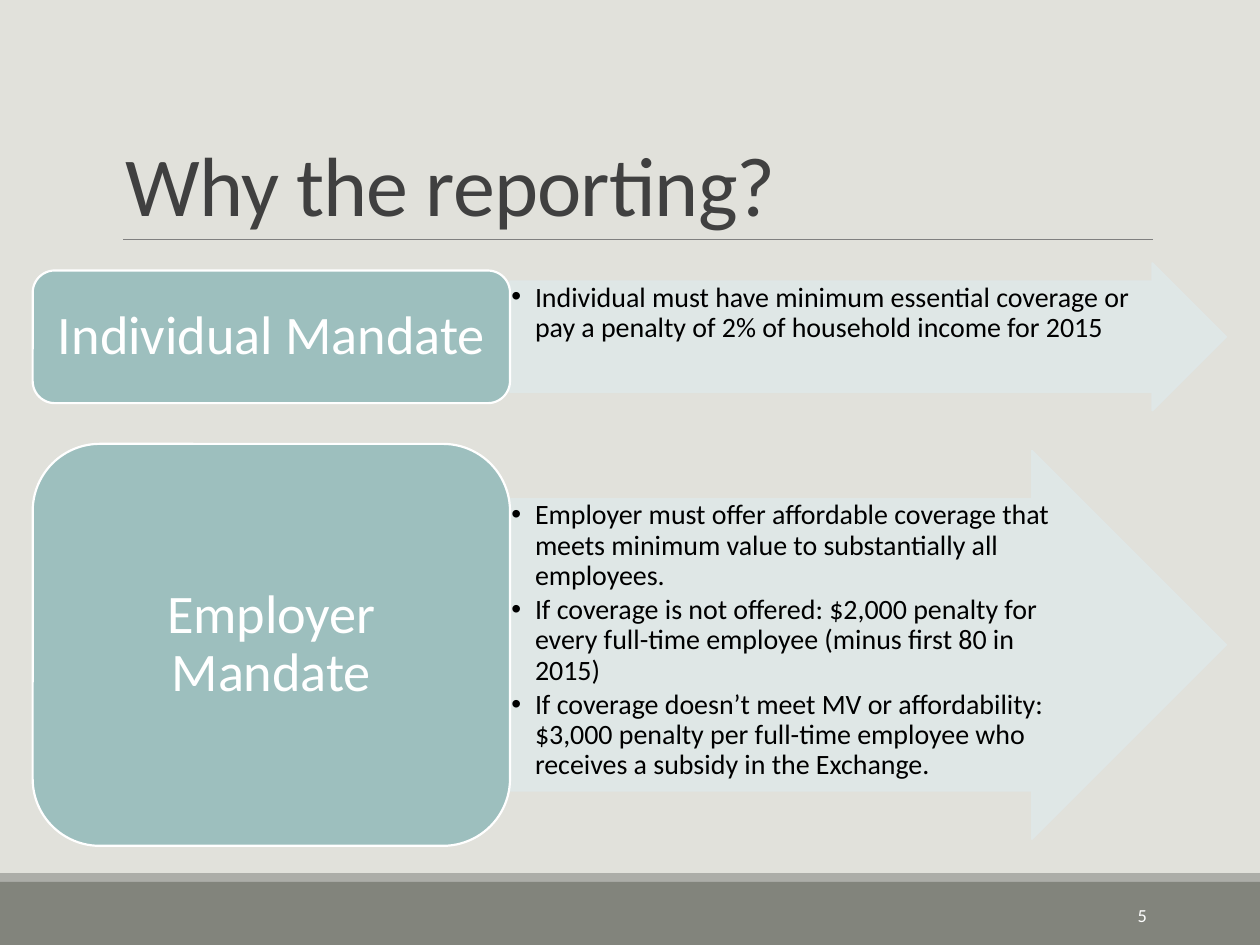
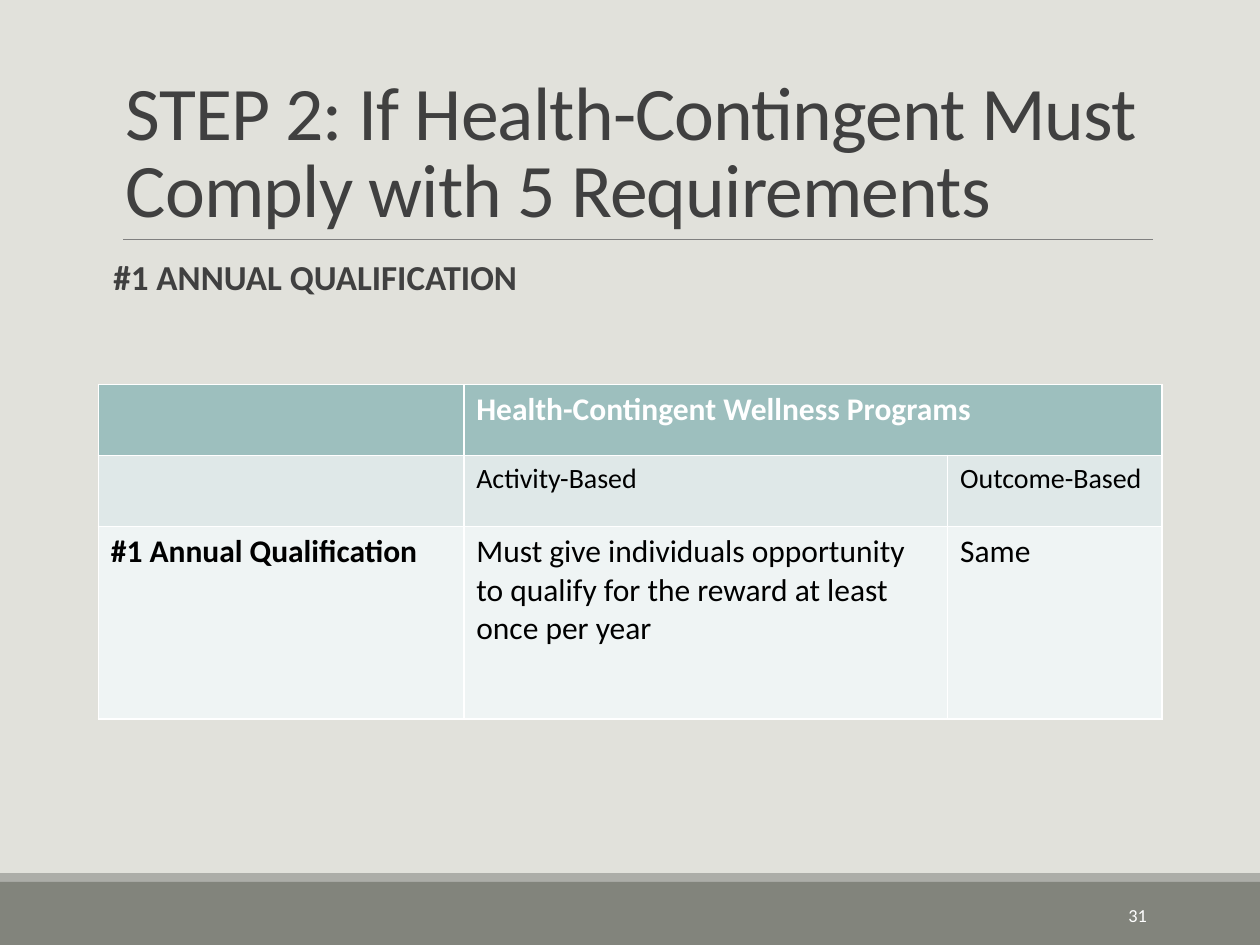
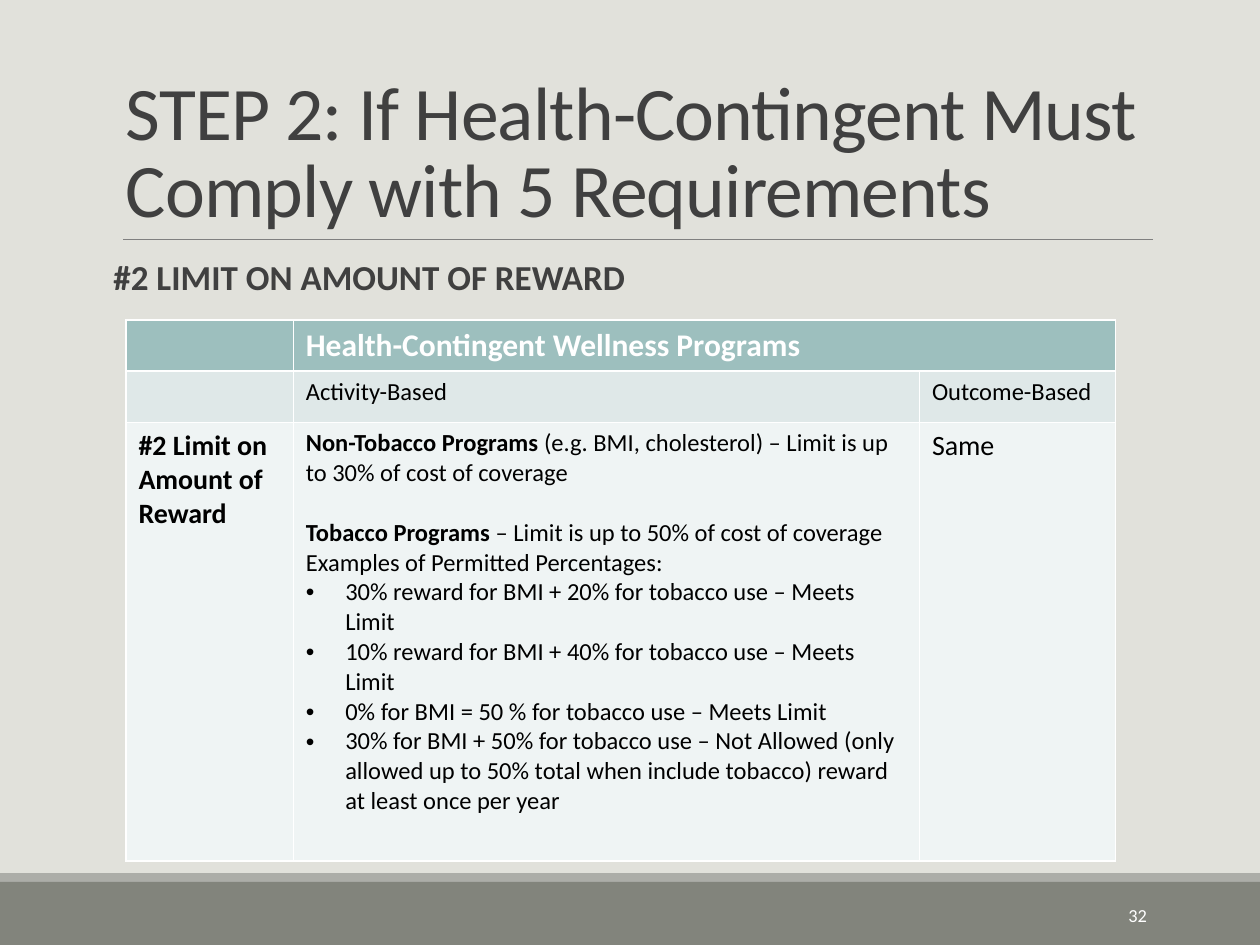
from pptx import Presentation
from pptx.dml.color import RGBColor
from pptx.enum.shapes import MSO_CONNECTOR, MSO_SHAPE
from pptx.enum.text import MSO_ANCHOR, PP_ALIGN
from pptx.oxml.ns import qn
from pptx.util import Pt
from lxml.etree import SubElement, Element

BACK = RGBColor(0xE1, 0xE1, 0xDB)
BAND = RGBColor(0x82, 0x84, 0x7C)
STRIP = RGBColor(0xAC, 0xAD, 0xA8)
RULE = RGBColor(0x80, 0x80, 0x80)
INK = RGBColor(0x40, 0x40, 0x40)
BLACK = RGBColor(0, 0, 0)
WHITE = RGBColor(0xFF, 0xFF, 0xFF)
TEAL = RGBColor(0x9D, 0xBF, 0xBE)
MIST = RGBColor(0xDF, 0xE8, 0xE8)
PALE = RGBColor(0xEF, 0xF4, 0xF4)

FONT = "Calibri"
WIDE, HIGH = 720, 540
TEXT_X, TEXT_W = 64.8, 594
STEP = "STEP 2: If Health-Contingent Must Comply with 5 Requirements"
PROGRAMS = "Health-Contingent Wellness Programs"


def add_run(para, text, size, color, bold=False):
    run = para.add_run()
    run.text = text
    font = run.font
    font.name, font.size, font.bold = FONT, Pt(size), bold
    font.color.rgb = color
    return run


def add_bullet(para, indent):
    props = para._p.get_or_add_pPr()
    props.set("marL", str(Pt(indent)))
    props.set("indent", str(-Pt(indent)))
    SubElement(props, qn("a:buFont")).set("typeface", "Arial")
    SubElement(props, qn("a:buChar")).set("char", "•")


def set_frame(frame, anchor, side=7.2, edge=3.6):
    frame.word_wrap = True
    frame.vertical_anchor = anchor
    frame.margin_left = frame.margin_right = Pt(side)
    frame.margin_top = frame.margin_bottom = Pt(edge)
    return frame.paragraphs[0]


def add_text(slide, box, anchor, side=7.2):
    """Add a text box and return its first paragraph."""
    frame = slide.shapes.add_textbox(*map(Pt, box)).text_frame
    return set_frame(frame, anchor, side)


def add_block(slide, kind, box, fill, line=None):
    shape = slide.shapes.add_shape(kind, *map(Pt, box))
    shape.shadow.inherit = False
    shape.fill.solid()
    shape.fill.fore_color.rgb = fill
    if line is None:
        shape.line.fill.background()
    else:
        shape.line.color.rgb = line
        shape.line.width = Pt(1.25)
    return shape


def add_base(deck, title, size, number):
    """Add a slide with background, bands, rule, title and number."""
    slide = deck.slides.add_slide(deck.slide_layouts[6])
    slide.background.fill.solid()
    slide.background.fill.fore_color.rgb = BACK
    add_block(slide, MSO_SHAPE.RECTANGLE, (0, 499, WIDE, 5), STRIP)
    add_block(slide, MSO_SHAPE.RECTANGLE, (0, 504, WIDE, HIGH - 504), BAND)
    rule = slide.shapes.add_connector(
        MSO_CONNECTOR.STRAIGHT, Pt(70.5), Pt(136.8), Pt(658.8), Pt(136.8))
    rule.line.color.rgb = RULE
    rule.line.width = Pt(0.5)
    SubElement(rule._element.spPr, qn("a:effectLst"))

    para = add_text(slide, (TEXT_X, 22.3, TEXT_W, 114.5), MSO_ANCHOR.BOTTOM)
    para.line_spacing = 0.85
    run = add_run(para, title, size, INK)
    run._r.get_or_add_rPr().set("spc", "-50")

    para = add_text(slide, (584.6, 508.3, 77.8, 28.8), MSO_ANCHOR.MIDDLE)
    para.alignment = PP_ALIGN.RIGHT
    add_run(para, str(number), 10.5, WHITE)
    return slide


def add_mandate(slide, box, grow, label, points):
    """Place a label and its arrow; grow is the label's extra height."""
    left, top, width, height = box
    split = width * 0.4
    arrow = add_block(slide, MSO_SHAPE.RIGHT_ARROW,
                      (left + split, top, width - split, height), MIST, MIST)
    arrow.adjustments[0], arrow.adjustments[1] = 0.75, 0.5
    for color in arrow._element.spPr.iter(qn("a:srgbClr")):
        SubElement(color, qn("a:alpha")).set("val", "90000")
    frame = arrow.text_frame
    para = set_frame(frame, MSO_ANCHOR.TOP, 0.8, 0.8)
    for i, point in enumerate(points):
        para = frame.add_paragraph() if i else para
        add_bullet(para, 13.5)
        para.alignment = PP_ALIGN.LEFT
        para.line_spacing = 0.9
        para.space_after = Pt(2.4)
        add_run(para, point, 16, BLACK)

    tag = add_block(slide, MSO_SHAPE.ROUNDED_RECTANGLE,
                    (left, top - grow / 2, split, height + grow), TEAL, WHITE)
    para = set_frame(tag.text_frame, MSO_ANCHOR.MIDDLE, 9.3, 4.65)
    para.alignment = PP_ALIGN.CENTER
    para.line_spacing = 0.9
    add_run(para, label, 31, WHITE)


def add_borders(cell):
    props = cell._tc.get_or_add_tcPr()
    for i, side in enumerate(("lnL", "lnR", "lnT", "lnB")):
        line = Element(qn("a:" + side), w=str(Pt(1)))
        fill = SubElement(line, qn("a:solidFill"))
        SubElement(fill, qn("a:srgbClr")).set("val", str(WHITE))
        props.insert(i, line)


def fill_cell(cell, paras, size, color):
    """Write paragraphs given as (runs, bulleted, space after)."""
    frame = cell.text_frame
    for i, (runs, bulleted, gap) in enumerate(paras):
        para = frame.add_paragraph() if i else frame.paragraphs[0]
        if bulleted:
            add_bullet(para, 22.5)
        if gap:
            para.space_after = Pt(gap)
        for text, bold in runs:
            add_run(para, text, size, color, bold)


def plain(text, bold=False):
    return [([(text, bold)], False, 0)]


def add_grid(slide, spot, cols, rows, sizes, topic, detail):
    """Add the table; sizes are those of kinds, topic, detail and "Same"."""
    kinds, name, body, same = sizes
    table = slide.shapes.add_table(
        3, 3, *map(Pt, (*spot, sum(cols), sum(rows)))).table
    table.horz_banding = False
    for col, width in zip(table.columns, cols):
        col.width = Pt(width)
    for row, height, fill in zip(table.rows, rows, (TEAL, MIST, PALE)):
        row.height = Pt(height)
        for cell in row.cells:
            cell.fill.solid()
            cell.fill.fore_color.rgb = fill
            add_borders(cell)
    table.cell(0, 1).merge(table.cell(0, 2))
    fill_cell(table.cell(0, 1), plain(PROGRAMS, True), 18, WHITE)
    fill_cell(table.cell(1, 1), plain("Activity-Based"), kinds, BLACK)
    fill_cell(table.cell(1, 2), plain("Outcome-Based"), kinds, BLACK)
    fill_cell(table.cell(2, 0), plain(topic, True), name, BLACK)
    fill_cell(table.cell(2, 1), detail, body, BLACK)
    fill_cell(table.cell(2, 2), plain("Same"), same, BLACK)


def add_step(deck, number, heading, *grid):
    slide = add_base(deck, STEP, 43.2, number)
    para = add_text(slide, (TEXT_X, 145.4, TEXT_W, 316.8), MSO_ANCHOR.TOP, 0)
    para.line_spacing = 0.9
    para.space_after = Pt(2)
    add_run(para, heading, 20, INK, True)
    add_grid(slide, *grid)


def main():
    deck = Presentation()
    deck.slide_width, deck.slide_height = Pt(WIDE), Pt(HIGH)

    slide = add_base(deck, "Why the reporting?", 48, 5)
    add_mandate(slide, (18.7, 150.4, 681.9, 84.2), -8.4, "Individual Mandate", [
        "Individual must have minimum essential coverage or pay a penalty "
        "of 2% of household income for 2015"])
    add_mandate(slide, (18.7, 257.6, 681.9, 221.8), 7.9, "Employer Mandate", [
        "Employer must offer affordable coverage that meets minimum value "
        "to substantially all employees.",
        "If coverage is not offered: $2,000 penalty for every full-time "
        "employee (minus first 80 in 2015)",
        "If coverage doesn’t meet MV or affordability: $3,000 penalty per "
        "full-time employee who receives a subsidy in the Exchange."])

    add_step(deck, 31, "#1 ANNUAL QUALIFICATION",
             (56.2, 219.8), (208.8, 276.5, 122.4), (40.5, 40.5, 110),
             (16, 18, 18, 18), "#1 Annual Qualification",
             plain("Must give individuals opportunity to qualify for the "
                   "reward at least once per year"))

    limits = [
        ([("Non-Tobacco Programs ", True),
          ("(e.g. BMI, cholesterol) – Limit is up to 30% of cost of coverage",
           False)], False, 17),
        ([("Tobacco Programs ", True),
          ("– Limit is up to 50% of cost of coverage", False)], False, 0),
        *plain("Examples of Permitted Percentages:")]
    cases = [
        "30% reward for BMI + 20% for tobacco use – Meets Limit",
        "10% reward for BMI + 40% for tobacco use – Meets Limit",
        "0% for BMI = 50 % for tobacco use – Meets Limit",
        "30% for BMI + 50% for tobacco use – Not Allowed (only allowed up to "
        "50% total when include tobacco) reward at least once per year"]
    limits += [([(case, False)], True, 0) for case in cases]
    add_step(deck, 32, "#2 LIMIT ON AMOUNT OF REWARD",
             (72, 182.9), (95.6, 357.8, 112.2), (29.2, 29.2, 250.6),
             (14, 16, 14, 16), "#2 Limit on Amount of Reward", limits)

    deck.save("out.pptx")


if __name__ == "__main__":
    main()
